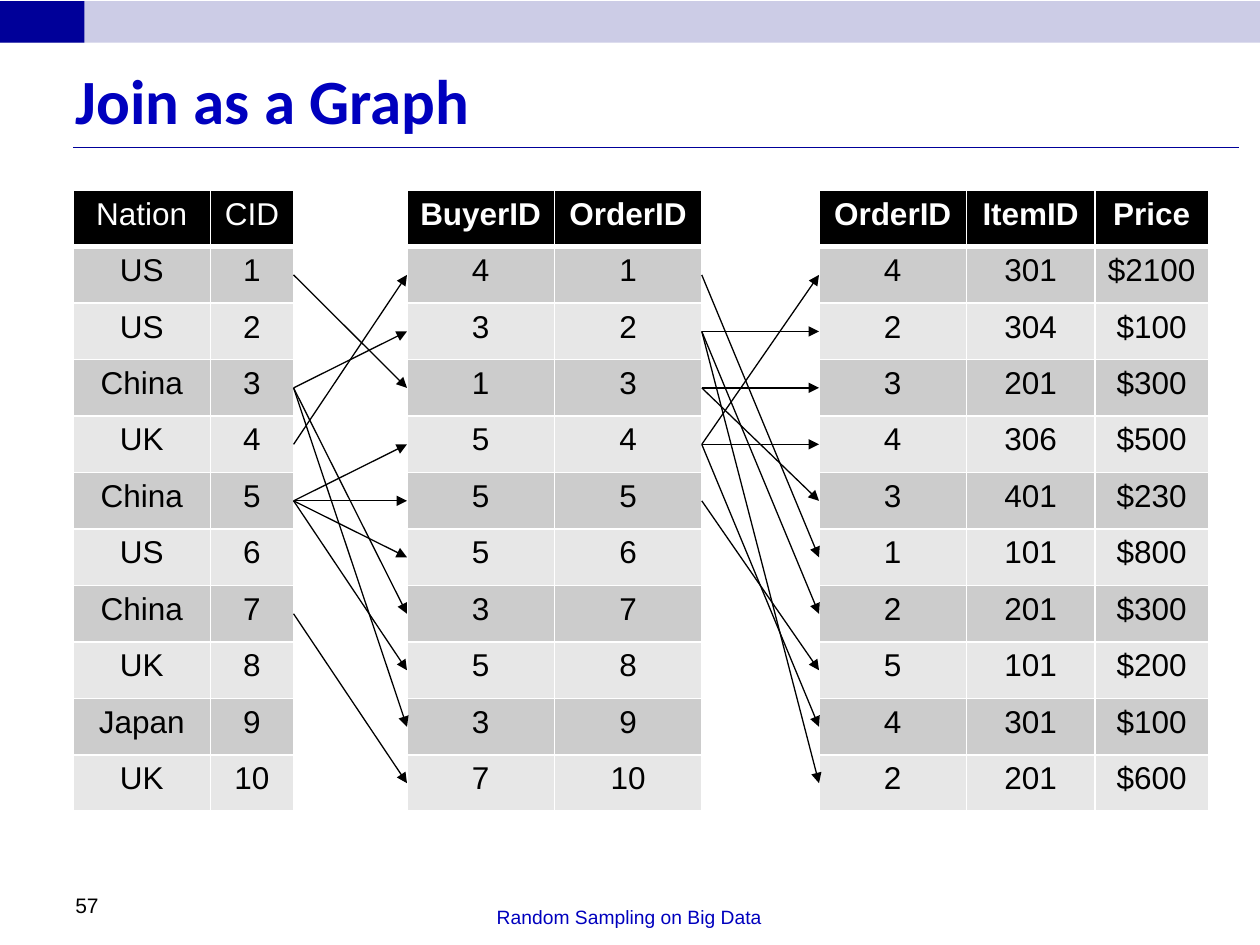
import dataclasses

import lxml.etree
import pptx
import pptx.dml.color
import pptx.enum.shapes
import pptx.enum.text
import pptx.oxml.ns
import pptx.util

Inches = pptx.util.Inches
Pt = pptx.util.Pt
Align = pptx.enum.text.PP_ALIGN
Anchor = pptx.enum.text.MSO_ANCHOR


@dataclasses.dataclass(frozen=True)
class Theme:
    heading_font: str = "Calibri"
    body_font: str = "Arial"
    title_size: int = 36
    table_size: int = 18
    number_size: int = 12
    footer_size: int = 11
    title_blue: str = "0000BE"
    navy: str = "000099"
    lavender: str = "CCCCE6"
    black: str = "000000"
    white: str = "FFFFFF"
    bands: tuple = ("CCCCCC", "E7E7E7")
    line_width: float = 0.75


def rgb(value):
    return pptx.dml.color.RGBColor.from_string(value)


def add_xml(parent, tag, **attributes):
    return lxml.etree.SubElement(parent, pptx.oxml.ns.qn(tag), attributes)


class SlideBuilder:
    def __init__(self, slide, theme):
        self.slide = slide
        self.theme = theme

    def style(self, paragraph, size, color, bold=False, align=Align.LEFT, font=None):
        paragraph.alignment = align
        paragraph.font.name = font or self.theme.body_font
        paragraph.font.size = Pt(size)
        paragraph.font.bold = bold
        paragraph.font.color.rgb = rgb(color)

    def title(self, text, left, top, width, height):
        title = self.slide.shapes.title
        title.left, title.top = Inches(left), Inches(top)
        title.width, title.height = Inches(width), Inches(height)
        title.text_frame.text = text
        title.text_frame.vertical_anchor = Anchor.MIDDLE
        self.style(title.text_frame.paragraphs[0], self.theme.title_size,
                   self.theme.title_blue, bold=True, font=self.theme.heading_font)

    def bar(self, left, top, width, height, color):
        bar = self.slide.shapes.add_shape(
            pptx.enum.shapes.MSO_SHAPE.RECTANGLE,
            Inches(left), Inches(top), Inches(width), Inches(height))
        bar.shadow.inherit = False
        bar.fill.solid()
        bar.fill.fore_color.rgb = rgb(color)
        bar.line.fill.background()

    def line(self, start, end, color, arrow=False):
        line = self.slide.shapes.add_connector(
            pptx.enum.shapes.MSO_CONNECTOR.STRAIGHT,
            *(Inches(value) for value in (*start, *end)))
        line.line.color.rgb = rgb(color)
        line.line.width = Pt(self.theme.line_width)
        if arrow:
            add_xml(line.line._get_or_add_ln(), "a:tailEnd", type="triangle")
        add_xml(line._element.spPr, "a:effectLst")

    def text(self, text, left, top, width, height, size, color, align=Align.LEFT):
        box = self.slide.shapes.add_textbox(
            Inches(left), Inches(top), Inches(width), Inches(height))
        box.text_frame.word_wrap = True
        box.text_frame.vertical_anchor = Anchor.BOTTOM
        box.text_frame.text = text
        self.style(box.text_frame.paragraphs[0], size, color, align=align)

    def cell(self, cell, text, fill, color, bold, widths):
        """Fill one cell; widths gives its border widths in points by side."""
        properties = cell._tc.get_or_add_tcPr()
        for side in "LRTB":
            border = add_xml(properties, f"a:ln{side}", w=str(Pt(widths.get(side, 1))))
            add_xml(add_xml(border, "a:solidFill"), "a:srgbClr", val=self.theme.white)
        cell.fill.solid()
        cell.fill.fore_color.rgb = rgb(fill)
        cell.text = text
        self.style(cell.text_frame.paragraphs[0], self.theme.table_size, color,
                   bold=bold, align=Align.CENTER)

    def table(self, left, top, column_widths, row_height, header, rows, bold_header):
        table = self.slide.shapes.add_table(
            len(rows) + 1, len(header), Inches(left), Inches(top),
            Inches(sum(column_widths)), Inches(row_height * (len(rows) + 1))).table
        table.horz_banding = False
        for column, width in zip(table.columns, column_widths):
            column.width = Inches(width)
        for row in table.rows:
            row.height = Inches(row_height)
        for c, name in enumerate(header):
            self.cell(table.cell(0, c), name, self.theme.black, self.theme.white,
                      bold_header, {"B": 3})
        for r, values in enumerate(rows, start=1):
            fill = self.theme.bands[(r - 1) % 2]
            for c, value in enumerate(values):
                self.cell(table.cell(r, c), str(value), fill, self.theme.black,
                          False, {"T": 3} if r == 1 else {})


# Table contents
NATIONS = ["US", "US", "China", "UK", "China", "US", "China", "UK", "Japan", "UK"]
CUSTOMERS = [(nation, cid) for cid, nation in enumerate(NATIONS, start=1)]
BUYERS = [4, 3, 1, 5, 5, 5, 3, 5, 3, 7]
ORDERS = [(buyer, order) for order, buyer in enumerate(BUYERS, start=1)]
ITEMS = [
    (4, 301, "$2100"), (2, 304, "$100"), (3, 201, "$300"), (4, 306, "$500"),
    (3, 401, "$230"), (1, 101, "$800"), (2, 201, "$300"), (5, 101, "$200"),
    (4, 301, "$100"), (2, 201, "$600"),
]

TABLE_TOP = 1.51
ROW_HEIGHT = 4.93 / 11


def row_middle(row):
    return TABLE_TOP + ROW_HEIGHT * (row + 0.5)


def main():
    theme = Theme()
    deck = pptx.Presentation()
    deck.slide_width, deck.slide_height = Inches(10), Inches(7.5)
    builder = SlideBuilder(deck.slides.add_slide(deck.slide_layouts[5]), theme)

    # Top band, title and rule
    builder.bar(0, 0.01, 10, 0.33, theme.lavender)
    builder.bar(0, 0.01, 0.67, 0.33, theme.navy)
    builder.line((0.58, 1.17), (9.83, 1.17), theme.navy)
    builder.title("Join as a Graph", 0.5, 0.33, 9.5, 0.92)

    # Footer and slide number
    builder.text("Random Sampling on Big Data", 2.58, 6.92, 4.83, 0.5,
                 theme.footer_size, theme.title_blue, Align.CENTER)
    builder.text("57", 0.5, 6.83, 2.33, 0.5, theme.number_size, theme.black)

    # Three relations
    relations = [
        (0.58, (1.09, 0.66), ("Nation", "CID"), CUSTOMERS, False),
        (3.23, (1.17, 1.17), ("BuyerID", "OrderID"), ORDERS, True),
        (6.5, (1.17, 1.02, 0.9), ("OrderID", "ItemID", "Price"), ITEMS, True),
    ]
    for left, widths, header, rows, bold_header in relations:
        builder.table(left, TABLE_TOP, widths, ROW_HEIGHT, header, rows, bold_header)

    # Join edges: the last key on the left matches the first key on the right
    for source, target in zip(relations, relations[1:]):
        source_right = source[0] + sum(source[1])
        keys = [row[-1] for row in source[3]]
        for target_row, values in enumerate(target[3], start=1):
            source_row = keys.index(values[0]) + 1
            builder.line((source_right, row_middle(source_row)),
                         (target[0], row_middle(target_row)), theme.black, arrow=True)

    deck.save("out.pptx")


if __name__ == "__main__":
    main()
